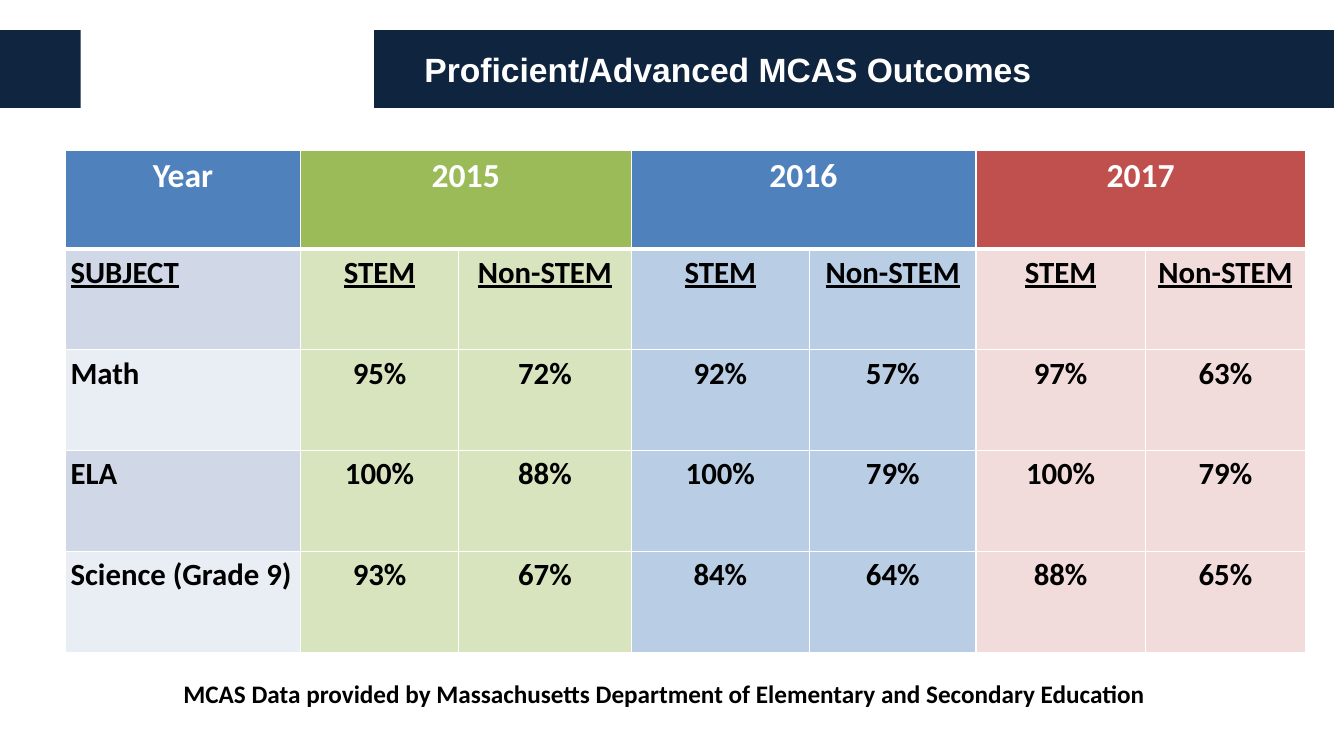
from lxml.etree import SubElement
from pptx import Presentation
from pptx.dml.color import RGBColor
from pptx.enum.shapes import MSO_SHAPE as SHAPE
from pptx.enum.text import MSO_ANCHOR as ANCHOR, PP_ALIGN as ALIGN
from pptx.oxml.ns import qn
from pptx.util import Emu, Pt

COLORS = {
    "white": "FFFFFF", "black": "000000",
    "left_bar": "10253F", "title_bar": "0F243E",
    "year": "4F81BD", "subject_dark": "D0D8E8", "subject_light": "E9EDF4",
}
YEARS = [
    ("2015", "9BBB59", "D7E4BD"),
    ("2016", "4F81BD", "B9CDE5"),
    ("2017", "C0504D", "F2DCDB"),
]
ROWS = [
    ["SUBJECT"] + ["STEM", "Non-STEM"] * len(YEARS),
    ["Math", "95%", "72%", "92%", "57%", "97%", "63%"],
    ["ELA", "100%", "88%", "100%", "79%", "100%", "79%"],
    ["Science (Grade 9)", "93%", "67%", "84%", "64%", "88%", "65%"],
]
COL_WIDTHS = [233, 157, 171, 177, 165, 168, 159]
ROW_HEIGHTS = [98] + [100] * len(ROWS)


def px(n):
    return Emu(n * 9144)


def rgb(value):
    return RGBColor.from_string(value)


def style_text(p, size, color, font="Calibri", align=ALIGN.LEFT, underline=False):
    p.alignment = align
    f = p.font
    f.name, f.size, f.bold, f.underline = font, Pt(size), True, underline
    f.color.rgb = rgb(color)


def add_bar(slide, x, width, color):
    sp = slide.shapes.add_shape(SHAPE.RECTANGLE, px(x), px(30), px(width), px(77))
    sp.shadow.inherit = False
    sp.fill.solid()
    sp.fill.fore_color.rgb = rgb(color)
    sp.line.fill.background()


def set_title(slide, text):
    title = slide.shapes.title
    title.left, title.top, title.width, title.height = px(411), px(30), px(856), px(77)
    tf = title.text_frame
    tf.text = text
    tf.vertical_anchor = ANCHOR.MIDDLE
    style_text(tf.paragraphs[0], 24, COLORS["white"], "Arial")
    slide.shapes._spTree.append(title._element)


def add_note(slide, text):
    tf = slide.shapes.add_textbox(px(172), px(668), px(982), px(40)).text_frame
    tf.word_wrap = True
    tf.text = text
    style_text(tf.paragraphs[0], 18, COLORS["black"])


def set_borders(cell, top, bottom):
    tc_pr = cell._tc.get_or_add_tcPr()
    for side, width in (("L", 1), ("R", 1), ("T", top), ("B", bottom)):
        ln = SubElement(tc_pr, qn(f"a:ln{side}"), w=str(Pt(width)))
        fill = SubElement(ln, qn("a:solidFill"))
        SubElement(fill, qn("a:srgbClr"), val=COLORS["white"])


def fill_cell(cell, text, fill, size, color, align, underline=False, top=1, bottom=1):
    set_borders(cell, top, bottom)
    cell.margin_left = cell.margin_right = px(5)
    cell.margin_top = cell.margin_bottom = px(5)
    cell.fill.solid()
    cell.fill.fore_color.rgb = rgb(fill)
    cell.text = text
    style_text(cell.text_frame.paragraphs[0], size, color, align=align, underline=underline)


def add_outcomes_table(slide):
    table = slide.shapes.add_table(
        len(ROW_HEIGHTS), len(COL_WIDTHS), px(65), px(149),
        px(sum(COL_WIDTHS)), px(sum(ROW_HEIGHTS))).table
    for column, width in zip(table.columns, COL_WIDTHS):
        column.width = px(width)
    for row, height in zip(table.rows, ROW_HEIGHTS):
        row.height = px(height)

    headers = [("Year", COLORS["year"])]
    for year, dark, _ in YEARS:
        headers += [(year, dark), ("", dark)]
    for c, (text, fill) in enumerate(headers):
        fill_cell(table.cell(0, c), text, fill, 24, COLORS["white"], ALIGN.CENTER, bottom=3)
    for c in range(1, len(COL_WIDTHS), 2):
        table.cell(0, c).merge(table.cell(0, c + 1))

    for r, values in enumerate(ROWS, 1):
        for c, text in enumerate(values):
            if c == 0:
                fill = COLORS["subject_dark" if r % 2 else "subject_light"]
            else:
                fill = YEARS[(c - 1) // 2][2]
            fill_cell(table.cell(r, c), text, fill, 22, COLORS["black"],
                      ALIGN.CENTER if c else ALIGN.LEFT,
                      underline=r == 1, top=3 if r == 1 else 1)


def main():
    prs = Presentation()
    prs.slide_width, prs.slide_height = px(1333), px(750)
    slide = prs.slides.add_slide(prs.slide_layouts[5])
    add_bar(slide, 0, 80, COLORS["left_bar"])
    add_bar(slide, 371, 952, COLORS["title_bar"])
    set_title(slide, "Proficient/Advanced MCAS Outcomes")
    add_outcomes_table(slide)
    add_note(slide, "MCAS Data provided by Massachusetts Department of "
                    "Elementary and Secondary Education")
    prs.save("out.pptx")


if __name__ == "__main__":
    main()
